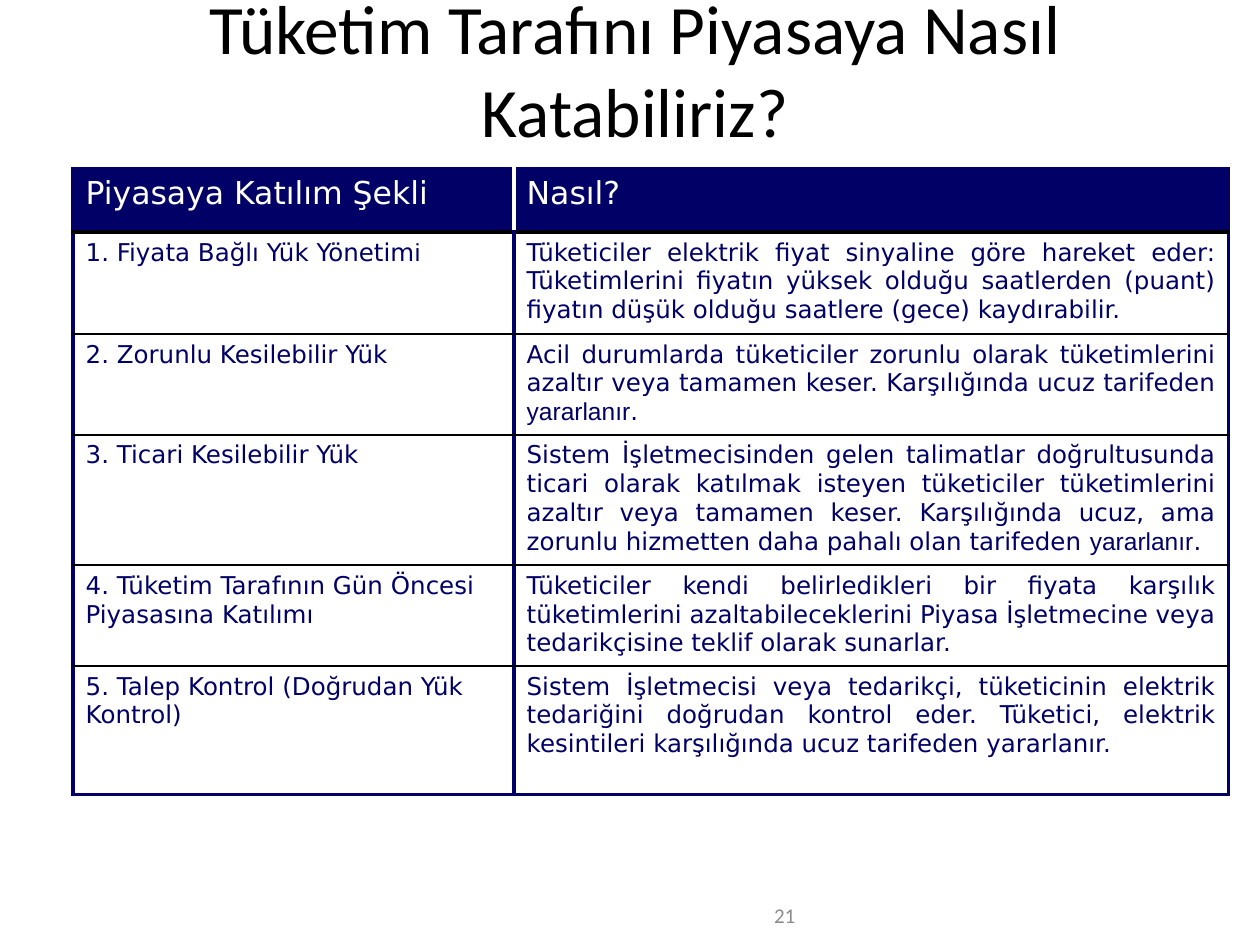
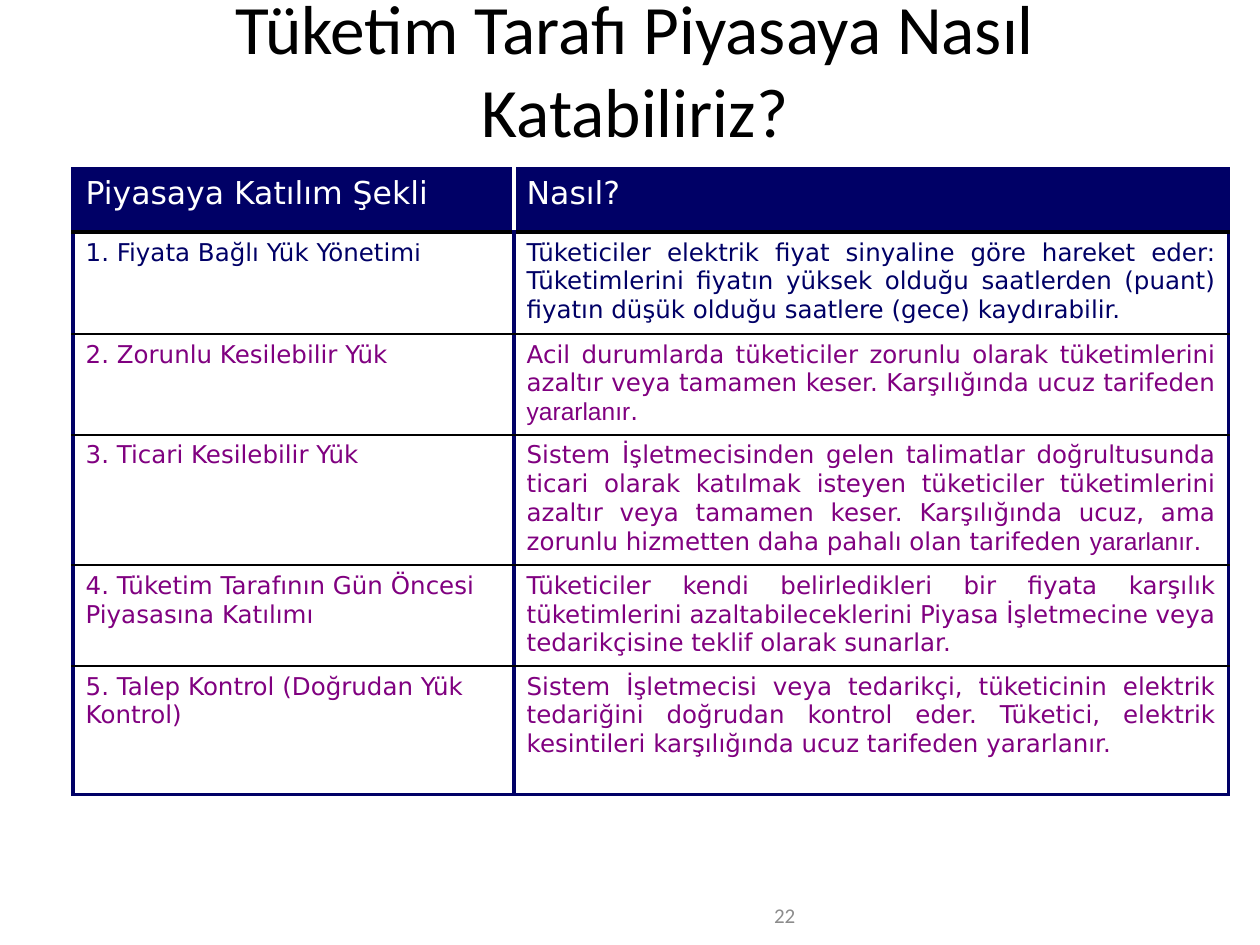
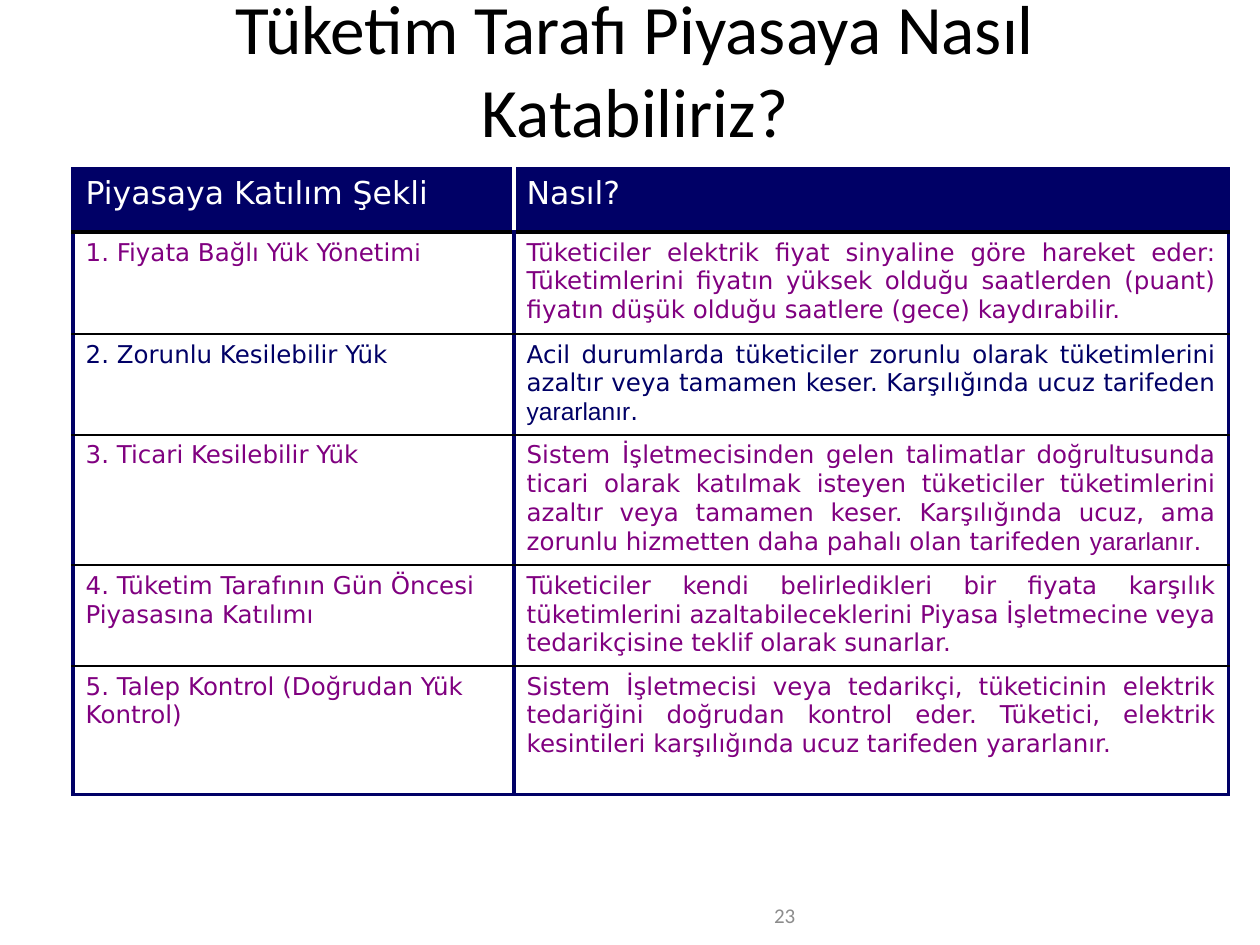
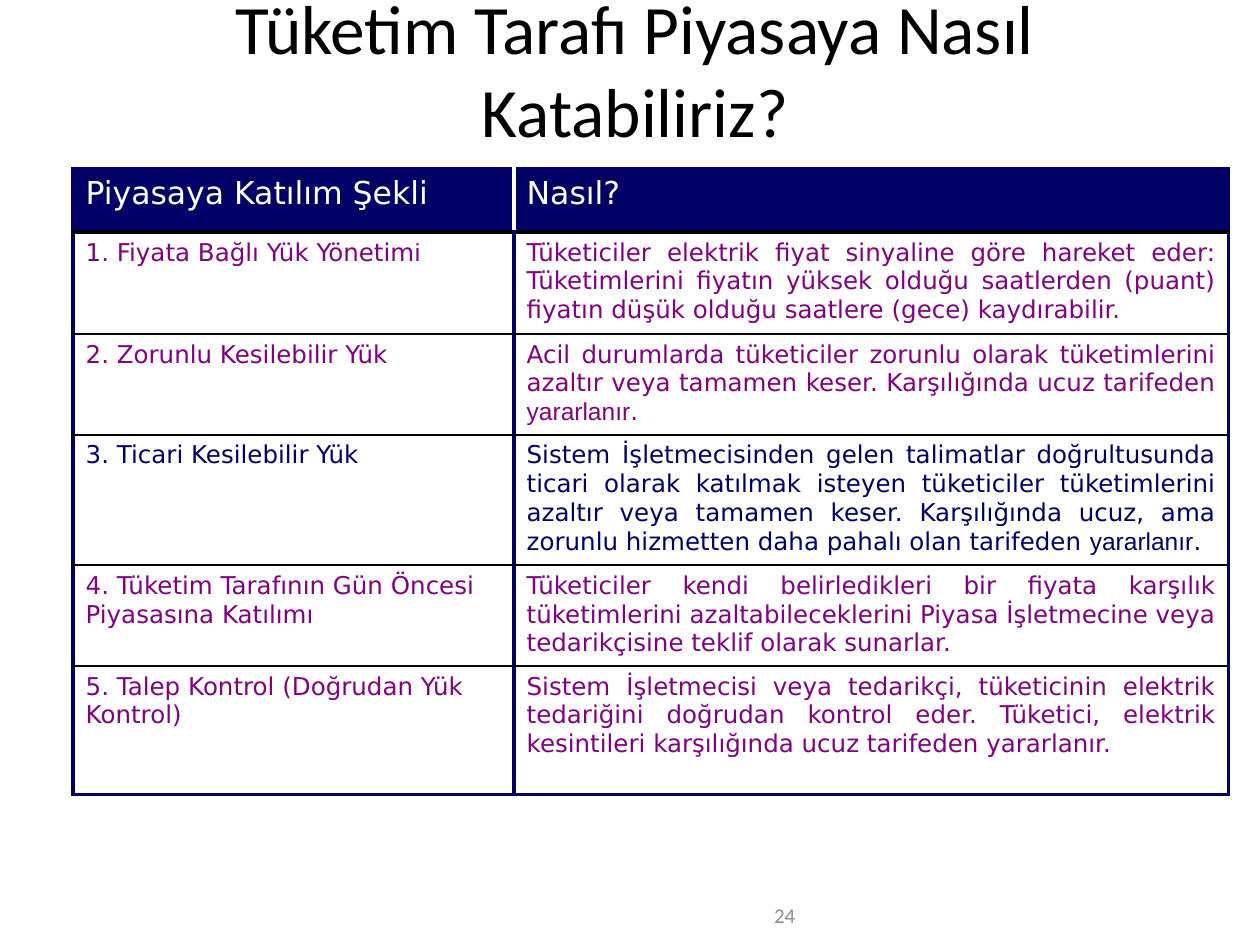
from pptx import Presentation
from pptx import util as u
from pptx.dml.color import RGBColor
from pptx.enum import text as t
from pptx.oxml import parse_xml
from pptx.oxml.ns import nsdecls

NAVY, PURPLE, WHITE, BLACK, GRAY = "000066", "800080", "FFFFFF", "000000", "8C8C8C"
TITLE_FONT, TABLE_FONT, ACCENT_FONT = "Calibri", "DejaVu Sans", "Arial"
TITLE_BOX = (0.5, 0.25, 9.08, 0.58)
NUMBER_BOX = (4.33, 7.14, 2.08, 0.25)
TABLE_BOX = (0.58, 1.34, 9.17, 4.92)
COLUMN_WIDTHS = (3.5, 5.67)
ROW_HEIGHTS = (0.5, 0.81, 0.79, 1.01, 0.79, 1.02)
FIRST_NUMBER = 21

# Text between vertical bars uses ACCENT_FONT.
ROWS = (
    ("Piyasaya Katılım Şekli", "Nasıl?"),
    ("1. Fiyata Bağlı Yük Yönetim|i|",
     "Tüketiciler elektrik fiyat sinyaline göre hareket eder: Tüketimlerini fiyatın "
     "yüksek olduğu saatlerden (puant) fiyatın düşük olduğu saatlere (gece) kaydırabilir."),
    ("2. Zorunlu Kesilebilir Yük",
     "Acil durumlarda tüketiciler zorunlu olarak tüketimlerini azaltır veya tamamen "
     "keser. Karşılığında ucuz tarifeden |yararlanır|. "),
    ("3. Ticari Kesilebilir Yük",
     "Sistem İşletmecisinden gelen talimatlar doğrultusunda ticari olarak katılmak "
     "isteyen tüketiciler tüketimlerini azaltır veya tamamen keser. Karşılığında ucuz, "
     "ama zorunlu hizmetten daha pahalı olan tarifeden |yararlanır|. "),
    ("4. Tüketim Tarafının Gün Öncesi Piyasasına Katılımı",
     "Tüketiciler kendi belirledikleri bir fiyata karşılık tüketimlerini "
     "azaltabileceklerini Piyasa İşletmecine veya tedarikçisine teklif olarak sunarlar."),
    ("5. Talep Kontrol (Doğrudan Yük Kontrol)",
     "Sistem İşletmecisi veya tedarikçi, tüketicinin elektrik tedariğini doğrudan "
     "kontrol eder. Tüketici, elektrik kesintileri karşılığında ucuz tarifeden yararlanır. "),
)
ALL_ROWS = set(range(1, len(ROWS)))
SLIDES = (
    ("Tüketim Tarafını Piyasaya Nasıl Katabiliriz?", ALL_ROWS),
    ("Tüketim Tarafı Piyasaya Nasıl Katabiliriz?", {1}),
    ("Tüketim Tarafı Piyasaya Nasıl Katabiliriz?", {2}),
    ("Tüketim Tarafı Piyasaya Nasıl Katabiliriz?", {3}),
)


def color(value):
    return RGBColor.from_string(value)


def write(frame, content, *, size, font, fill, align):
    paragraph = frame.paragraphs[0]
    paragraph.alignment = align
    for index, part in enumerate(content.split("|")):
        if part:
            run = paragraph.add_run()
            run.text = part
            run.font.size = u.Pt(size)
            run.font.name = ACCENT_FONT if index % 2 else font
            run.font.bold = False
            run.font.color.rgb = color(fill)


def add_text(slide, box, content, **style):
    frame = slide.shapes.add_textbox(*map(u.Inches, box)).text_frame
    frame.word_wrap = True
    frame.vertical_anchor = t.MSO_ANCHOR.MIDDLE
    write(frame, content, font=TITLE_FONT, **style)


def set_border(cell, side, line_color, width):
    cell._tc.get_or_add_tcPr().append(parse_xml(
        f'<a:ln{side} {nsdecls("a")} w="{u.Pt(width)}">'
        f'<a:solidFill><a:srgbClr val="{line_color}"/></a:solidFill></a:ln{side}>'))


def format_borders(cell, row, column):
    last = len(ROWS) - 1
    divider = WHITE if row == 0 else NAVY
    thick, thin = 2.25, 1
    set_border(cell, "L", divider if column else NAVY, thick)
    set_border(cell, "R", NAVY if column else divider, thick)
    set_border(cell, "T", BLACK if row else NAVY, thin if row > 1 else thick)
    set_border(cell, "B", NAVY if row == last else BLACK,
               thick if row in (0, last) else thin)


def add_methods_table(slide, box, active_rows):
    frame = slide.shapes.add_table(len(ROWS), len(COLUMN_WIDTHS), *map(u.Inches, box))
    table = frame.table
    table.first_row = table.horz_banding = False
    for column, width in zip(table.columns, COLUMN_WIDTHS):
        column.width = u.Inches(width)
    for row, height in zip(table.rows, ROW_HEIGHTS):
        row.height = u.Inches(height)
    for row, contents in enumerate(ROWS):
        header = row == 0
        text_color = WHITE if header else NAVY if row in active_rows else PURPLE
        for column, content in enumerate(contents):
            cell = table.cell(row, column)
            format_borders(cell, row, column)
            cell.fill.solid()
            cell.fill.fore_color.rgb = color(NAVY if header else WHITE)
            write(cell.text_frame, content, size=18 if header else 14,
                  font=TABLE_FONT, fill=text_color,
                  align=t.PP_ALIGN.JUSTIFY if column else t.PP_ALIGN.LEFT)


def add_methods_slide(presentation, number, title, active_rows):
    slide = presentation.slides.add_slide(presentation.slide_layouts[6])
    add_text(slide, NUMBER_BOX, str(number), size=12, fill=GRAY, align=t.PP_ALIGN.RIGHT)
    add_text(slide, TITLE_BOX, title, size=39.6, fill=BLACK, align=t.PP_ALIGN.CENTER)
    add_methods_table(slide, TABLE_BOX, active_rows)


def main():
    presentation = Presentation()
    presentation.slide_width = u.Inches(10)
    presentation.slide_height = u.Inches(7.5)
    for number, (title, active_rows) in enumerate(SLIDES, FIRST_NUMBER):
        add_methods_slide(presentation, number, title, active_rows)
    presentation.save("out.pptx")


if __name__ == "__main__":
    main()
